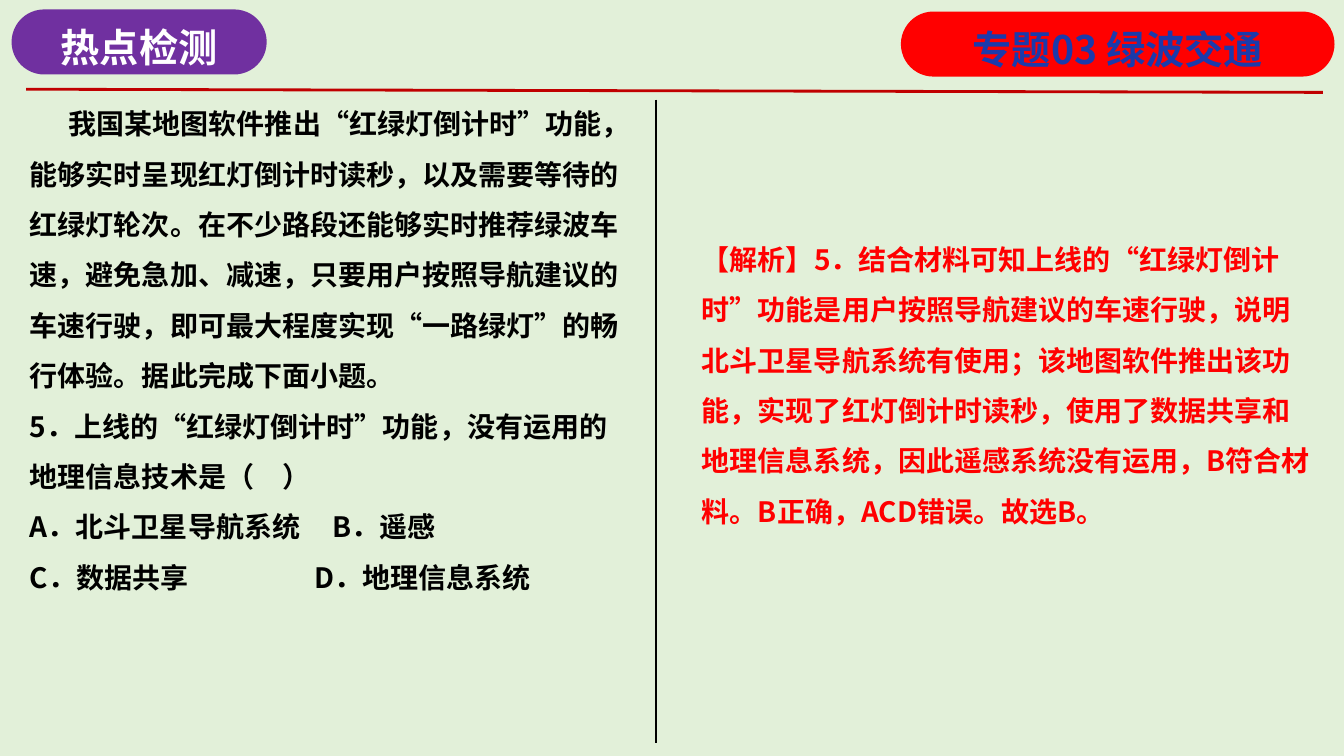
from dataclasses import dataclass

from lxml.etree import SubElement
from pptx import Presentation
from pptx.dml.color import RGBColor
from pptx.enum.shapes import MSO_CONNECTOR as Link, MSO_SHAPE as Form
from pptx.enum.text import MSO_ANCHOR as Anchor, MSO_AUTO_SIZE as Fit, PP_ALIGN as Align
from pptx.oxml.ns import qn
from pptx.slide import Slide
from pptx.text.text import _Paragraph as Para
from pptx.util import Emu, Pt

FONT = "Noto Sans CJK SC"
SCALE = 9525


@dataclass(frozen=True)
class Line:
    text: str
    indent: int = 0
    tab: int = 0


@dataclass(frozen=True)
class Pill:
    box: tuple[int, int, int, int]
    fill: str
    ink: str
    text: str


@dataclass(frozen=True)
class Panel:
    box: tuple[int, int, int, int]
    ink: str
    lines: tuple[Line, ...]


@dataclass(frozen=True)
class Rule:
    ends: tuple[int, int, int, int]
    ink: str
    width: float


PILLS = (
    Pill((11, 9, 243, 62), "7030A0", "FFFFFF", "热点检测"),
    Pill((858, 11, 413, 62), "FF0000", "1B3AAB", "专题03 绿波交通"),
)
RULES = (
    Rule((25, 85, 1260, 88), "C00000", 2),
    Rule((625, 95, 625, 708), "000000", 1.5),
)
PANELS = (
    Panel((19, 81, 584, 494), "000000", (
        Line("我国某地图软件推出“红绿灯倒计时”功能，能够实时呈现红灯倒计时读秒，"
             "以及需要等待的红绿灯轮次。在不少路段还能够实时推荐绿波车速，避免急加、减速，"
             "只要用户按照导航建议的车速行驶，即可最大程度实现“一路绿灯”的畅行体验。"
             "据此完成下面小题。", indent=37),
        Line("5．上线的“红绿灯倒计时”功能，没有运用的地理信息技术是（　）"),
        Line("A．北斗卫星导航系统\tB．遥感", tab=288),
        Line("C．数据共享\tD．地理信息系统", tab=271),
    )),
    Panel((659, 210, 602, 300), "FF0000", (
        Line("【解析】5．结合材料可知上线的“红绿灯倒计时”功能是用户按照导航建议的车速行驶，"
             "说明北斗卫星导航系统有使用；该地图软件推出该功能，实现了红灯倒计时读秒，"
             "使用了数据共享和地理信息系统，因此遥感系统没有运用，B符合材料。"
             "B正确，ACD错误。故选B。"),
    )),
)


def px(size: int) -> Emu:
    return Emu(size * SCALE)


def rgb(code: str) -> RGBColor:
    return RGBColor.from_string(code)


def add_run(para: Para, text: str, size: int, ink: str) -> None:
    run = para.add_run()
    run.text = text
    run.font.size = Pt(size)
    run.font.bold = True
    run.font.color.rgb = rgb(ink)
    run.font.name = FONT
    SubElement(run._r.get_or_add_rPr(), qn("a:ea"), typeface=FONT)


def add_pill(slide: Slide, pill: Pill) -> None:
    shape = slide.shapes.add_shape(Form.ROUNDED_RECTANGLE, *map(px, pill.box))
    shape.adjustments[0] = 0.5
    shape.shadow.inherit = False
    shape.fill.solid()
    shape.fill.fore_color.rgb = rgb(pill.fill)
    shape.line.fill.background()
    frame = shape.text_frame
    frame.word_wrap = False
    frame.vertical_anchor = Anchor.MIDDLE
    para = frame.paragraphs[0]
    para.alignment = Align.CENTER
    para.line_spacing = 1.2
    add_run(para, pill.text, 28, pill.ink)


def add_panel(slide: Slide, panel: Panel) -> None:
    frame = slide.shapes.add_textbox(*map(px, panel.box)).text_frame
    frame.word_wrap = True
    frame.auto_size = Fit.SHAPE_TO_FIT_TEXT
    for index, line in enumerate(panel.lines):
        para = frame.add_paragraph() if index else frame.paragraphs[0]
        props = para._p.get_or_add_pPr()
        if line.indent:
            props.set("indent", str(px(line.indent)))
        if line.tab:
            tabs = SubElement(props, qn("a:tabLst"))
            SubElement(tabs, qn("a:tab"), pos=str(px(line.tab)), algn="l")
        para.line_spacing = 1.5
        add_run(para, line.text, 20, panel.ink)


def add_rule(slide: Slide, rule: Rule) -> None:
    link = slide.shapes.add_connector(Link.STRAIGHT, *map(px, rule.ends))
    link.line.color.rgb = rgb(rule.ink)
    link.line.width = Pt(rule.width)
    SubElement(link._element.spPr, qn("a:effectLst"))


def main() -> None:
    deck = Presentation()
    deck.slide_width, deck.slide_height = px(1280), px(720)
    slide = deck.slides.add_slide(deck.slide_layouts[6])
    slide.background.fill.solid()
    slide.background.fill.fore_color.rgb = rgb("E2F0D9")
    for rule in RULES:
        add_rule(slide, rule)
    for panel in PANELS:
        add_panel(slide, panel)
    for pill in PILLS:
        add_pill(slide, pill)
    deck.save("out.pptx")


if __name__ == "__main__":
    main()
